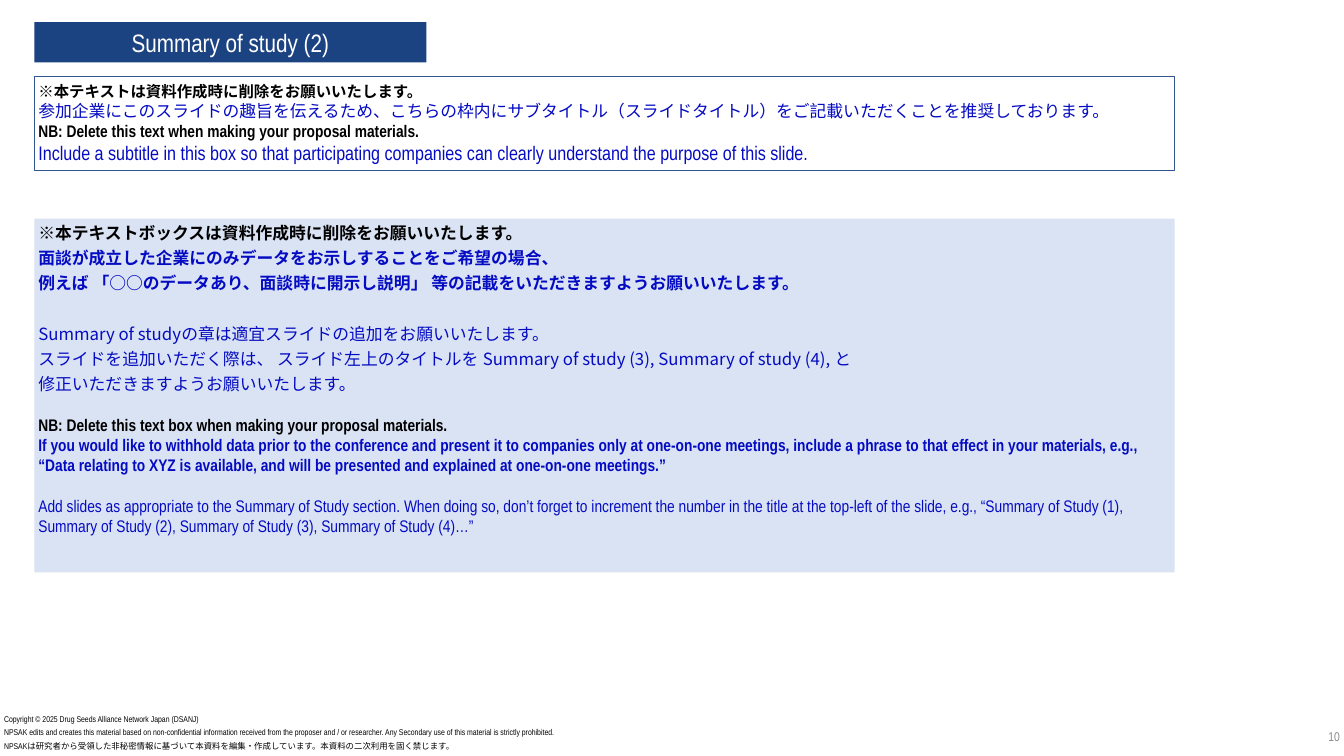
from dataclasses import dataclass

from lxml import etree
from pptx import Presentation
from pptx import util as u
from pptx.dml.color import RGBColor
from pptx.enum import shapes, text
from pptx.oxml.ns import qn


@dataclass(frozen=True)
class Theme:
    navy: str = "1B4281"
    outline: str = "325491"
    panel: str = "DAE3F3"
    guide: str = "040BC2"
    black: str = "000000"
    white: str = "FFFFFF"
    grey: str = "898989"
    narrow: str = "Arial Narrow"
    sans: str = "Arial"
    japanese: str = "Noto Sans CJK JP"
    title: float = 18
    lead: float = 14
    body: float = 12
    note: float = 11
    page: float = 9
    legal: float = 6
    leading: float = 18
    legal_leading: float = 7.2
    gap: float = 14.5
    inset: float = 0.04


THEME = Theme()
SLIDE_W, SLIDE_H = 13.33, 7.5
LEFT, PANEL_W = 0.34, 11.31


@dataclass(frozen=True)
class Line:
    wording: str
    size: float = THEME.body
    color: str = THEME.guide
    bold: bool = False
    face: str = THEME.narrow
    leading: float | None = None
    before: float = 0


def japanese_line(wording, **options):
    return Line(wording, face=THEME.japanese, **{"leading": THEME.leading, **options})


def place(part, box):
    part.left, part.top, part.width, part.height = map(u.Inches, box)


def paint(part, color):
    part.fill.solid()
    part.fill.fore_color.rgb = RGBColor.from_string(color)


def write(part, lines, anchor=text.MSO_ANCHOR.TOP, align=text.PP_ALIGN.LEFT, wrap=True):
    """Fill a shape with unbulleted paragraphs, one per Line."""
    frame = part.text_frame
    frame.word_wrap = wrap
    frame.auto_size = text.MSO_AUTO_SIZE.NONE
    frame.vertical_anchor = anchor
    frame.margin_left = frame.margin_right = u.Inches(THEME.inset)
    frame.margin_top = frame.margin_bottom = u.Inches(THEME.inset)
    frame.text = "\n".join(line.wording for line in lines)
    for paragraph, line in zip(frame.paragraphs, lines):
        paragraph.alignment = align
        paragraph.space_before = u.Pt(line.before)
        paragraph.line_spacing = u.Pt(line.leading) if line.leading else 1.0
        props = paragraph._p.get_or_add_pPr()
        props.set("marL", "0")
        props.set("indent", "0")
        etree.SubElement(props, qn("a:buNone"))
        font = paragraph.font
        font.name, font.size, font.bold = line.face, u.Pt(line.size), line.bold
        font.color.rgb = RGBColor.from_string(line.color)
        east_asian = etree.SubElement(props.find(qn("a:defRPr")), qn("a:ea"))
        east_asian.set("typeface", THEME.japanese)


def add_title(slide, box):
    title = slide.shapes.title
    place(title, box)
    paint(title, THEME.navy)
    write(title, [Line("Summary of study (2)", THEME.title, THEME.white)],
          text.MSO_ANCHOR.MIDDLE, text.PP_ALIGN.CENTER)


def add_subtitle_frame(slide, box):
    frame = slide.shapes.add_shape(shapes.MSO_SHAPE.RECTANGLE, *map(u.Inches, box))
    frame.shadow.inherit = False
    frame.fill.background()
    frame.line.color.rgb = RGBColor.from_string(THEME.outline)
    frame.line.width = u.Pt(1)
    write(frame, [
        Line("※本テキストは資料作成時に削除をお願いいたします。",
             THEME.note, THEME.black, True, THEME.sans),
        Line("参加企業にこのスライドの趣旨を伝えるため、こちらの枠内にサブタイトル"
             "（スライドタイトル）をご記載いただくことを推奨しております。", face=THEME.sans),
        Line("NB: Delete this text when making your proposal materials.",
             color=THEME.black, bold=True),
        Line("Include a subtitle in this box so that participating companies can "
             "clearly understand the purpose of this slide.", THEME.lead),
    ], text.MSO_ANCHOR.MIDDLE)


def add_guidance_panel(slide, box):
    panel = slide.placeholders[1]
    place(panel, box)
    paint(panel, THEME.panel)
    write(panel, [
        japanese_line("※本テキストボックスは資料作成時に削除をお願いいたします。",
                      color=THEME.black, bold=True, leading=None),
        japanese_line("面談が成立した企業にのみデータをお示しすることをご希望の場合、", bold=True),
        japanese_line("例えば 「○○のデータあり、面談時に開示し説明」 "
                      "等の記載をいただきますようお願いいたします。", bold=True),
        japanese_line("Summary of studyの章は適宜スライドの追加をお願いいたします。",
                      before=THEME.leading),
        japanese_line("スライドを追加いただく際は、 スライド左上のタイトルを "
                      "Summary of study (3), Summary of study (4), と"),
        japanese_line("修正いただきますようお願いいたします。"),
        Line("NB: Delete this text box when making your proposal materials.",
             color=THEME.black, bold=True, before=THEME.gap),
        Line("If you would like to withhold data prior to the conference and present it to "
             "companies only at one-on-one meetings, include a phrase to that effect in your "
             "materials, e.g., “Data relating to XYZ is available, and will be presented and "
             "explained at one-on-one meetings.”", bold=True),
        Line("Add slides as appropriate to the Summary of Study section. When doing so, don’t "
             "forget to increment the number in the title at the top-left of the slide, e.g., "
             "“Summary of Study (1), Summary of Study (2), Summary of Study (3), "
             "Summary of Study (4)…”", before=THEME.gap),
    ])


def add_legal_notes(slide, box):
    left, top, width, height = box
    notes = [
        ("Copyright © 2025 Drug Seeds Alliance Network Japan (DSANJ)", None),
        ("NPSAK edits and creates this material based on non-confidential information received "
         "from the proposer and / or researcher. Any Secondary use of this material is strictly "
         "prohibited.", THEME.legal_leading),
        ("NPSAKは研究者から受領した非秘密情報に基づいて本資料を編集・作成しています。"
         "本資料の二次利用を固く禁じます。", THEME.legal_leading),
    ]
    pitch = height / len(notes)
    for row, (wording, leading) in enumerate(notes):
        note = slide.shapes.add_textbox(
            *map(u.Inches, (left, top + row * pitch, width, 0.2)))
        write(note, [Line(wording, THEME.legal, THEME.black, leading=leading)], wrap=False)


def add_page_number(slide, box):
    number = slide.shapes.add_textbox(*map(u.Inches, box))
    write(number, [Line("10", THEME.page, THEME.grey)],
          text.MSO_ANCHOR.MIDDLE, text.PP_ALIGN.RIGHT)


def main():
    deck = Presentation()
    deck.slide_width, deck.slide_height = u.Inches(SLIDE_W), u.Inches(SLIDE_H)
    slide = deck.slides.add_slide(deck.slide_layouts[1])
    add_title(slide, (LEFT, 0.22, 3.89, 0.4))
    add_guidance_panel(slide, (LEFT, 2.17, PANEL_W, 3.51))
    add_subtitle_frame(slide, (LEFT, 0.76, PANEL_W, 0.93))
    add_legal_notes(slide, (0, 7.04, 7.72, 0.41))
    add_page_number(slide, (11, 7.12, SLIDE_W - 11, 0.37))
    deck.save("out.pptx")


if __name__ == "__main__":
    main()
